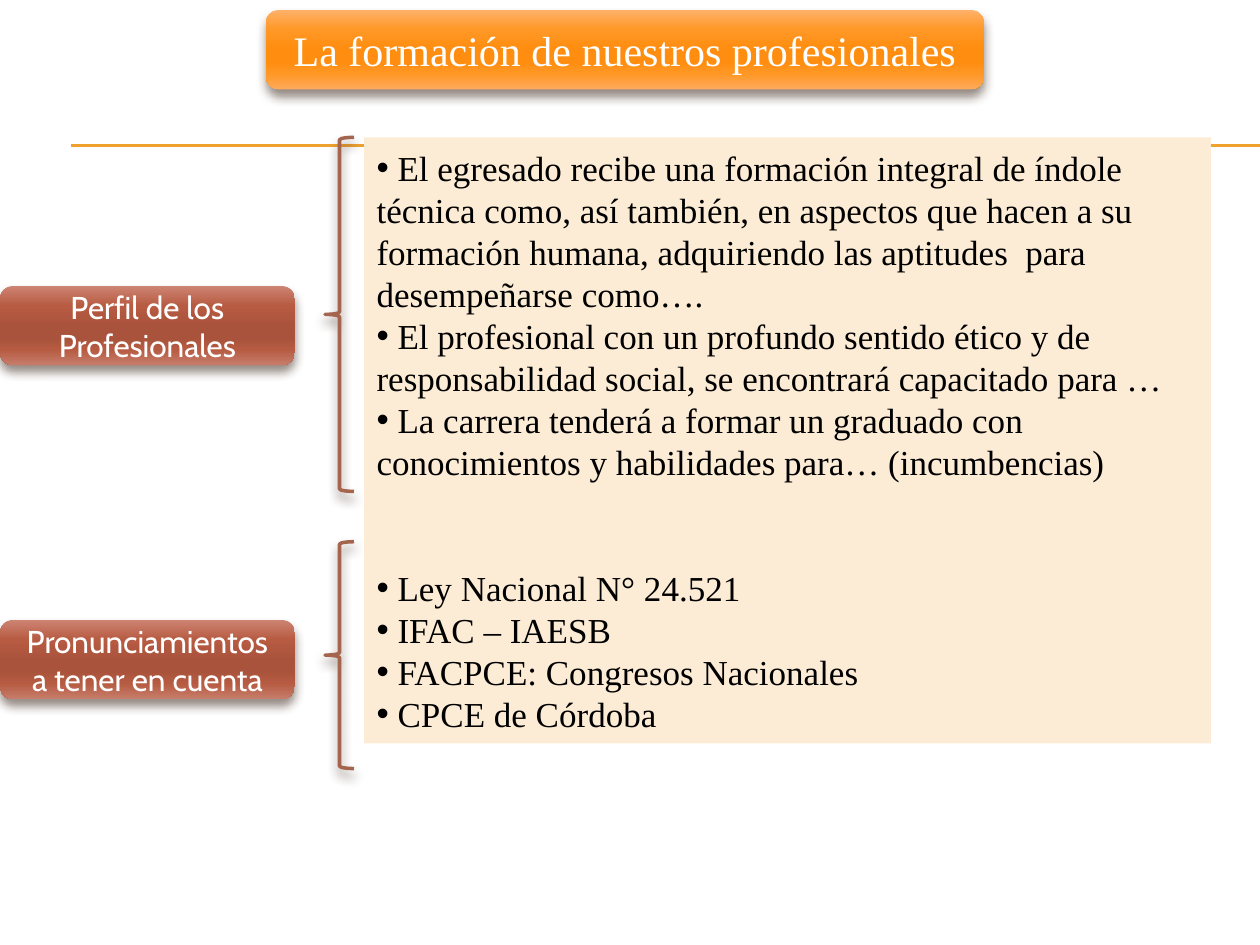
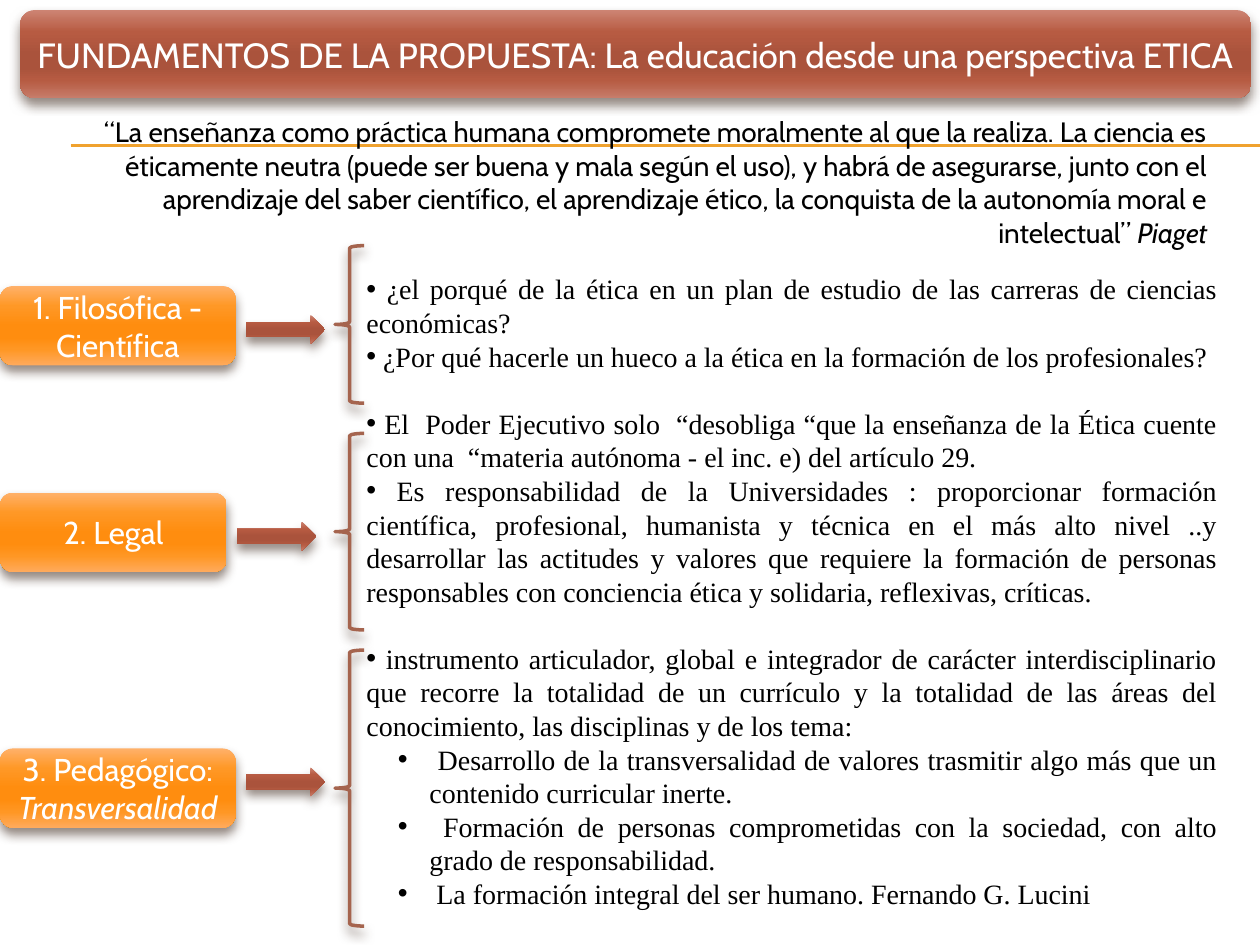
import dataclasses
from typing import Optional

import lxml.etree
import pptx
import pptx.dml.color
import pptx.enum.shapes
import pptx.enum.text
import pptx.oxml.ns
import pptx.util

Inches = pptx.util.Inches
Pt = pptx.util.Pt
RGBColor = pptx.dml.color.RGBColor
Shape = pptx.enum.shapes.MSO_SHAPE
Align = pptx.enum.text.PP_ALIGN
Anchor = pptx.enum.text.MSO_ANCHOR
qn = pptx.oxml.ns.qn

# Shared look
WHITE = RGBColor(0xFF, 0xFF, 0xFF)
BLACK = RGBColor(0x00, 0x00, 0x00)
CREAM = RGBColor(0xFC, 0xEC, 0xD5)
GOLD = RGBColor(0xF0, 0xA2, 0x2E)
BROWN = RGBColor(0xA5, 0x64, 0x4E)
SHADOW = RGBColor(0x4E, 0x3B, 0x30)
STOPS = (0, 25, 50, 65, 80, 100)
ORANGE_GLOSS = tuple(map(RGBColor.from_string, (
    "FFB16A", "FF9826", "FF8D0F", "FF8D0F", "FF9724", "FFAA5C")))
RUST_GLOSS = tuple(map(RGBColor.from_string, (
    "CD8473", "B75B42", "AA533C", "AA533C", "B65B42", "C77D6B")))
SANS = "Cabin"
SERIF = "Times New Roman"
LINE_RATIO = 1.2
PILL_HEIGHT = 0.63
BRACE_WIDTH = 0.23


@dataclasses.dataclass(frozen=True)
class Area:
    left: float
    top: float
    width: float
    height: float

    def lengths(self) -> tuple:
        return tuple(Inches(value) for value in dataclasses.astuple(self))


@dataclasses.dataclass(frozen=True)
class Pill:
    area: Area
    text: str
    gloss: tuple
    size: int = 18
    font: str = SANS
    italic: str = ""


@dataclasses.dataclass(frozen=True)
class Bullet:
    text: str
    gap_lines: int = 0
    nested: bool = False


@dataclasses.dataclass(frozen=True)
class Brace:
    top: float
    height: float


@dataclasses.dataclass(frozen=True)
class Foundation:
    pill: Pill
    arrow_top: float
    brace: Brace


def add_shadow(shape) -> None:
    shape.shadow.inherit = False
    effects = shape._element.spPr.find(qn("a:effectLst"))
    outer = lxml.etree.SubElement(
        effects, qn("a:outerShdw"), blurRad=str(Pt(6)), dist=str(Pt(4)),
        dir="5400000", rotWithShape="0")
    colour = lxml.etree.SubElement(outer, qn("a:srgbClr"), val=str(SHADOW))
    lxml.etree.SubElement(colour, qn("a:alpha"), val="60000")


def add_glossy(page, kind, area: Area, gloss: tuple):
    shape = page.shapes.add_shape(kind, *area.lengths())
    shape.fill.gradient()
    shape.fill.gradient_angle = 270
    stops = shape._element.spPr.find(qn("a:gradFill")).find(qn("a:gsLst"))
    for old_stop in list(stops):
        stops.remove(old_stop)
    for position, colour in zip(STOPS, gloss):
        stop = lxml.etree.SubElement(stops, qn("a:gs"), pos=str(position * 1000))
        lxml.etree.SubElement(stop, qn("a:srgbClr"), val=str(colour))
    shape.line.fill.background()
    add_shadow(shape)
    return shape


def write(para, text: str, font: str, size: int, colour: RGBColor,
          align, italic: str = "") -> None:
    para.alignment = align
    para.font.name = font
    para.font.size = Pt(size)
    para.font.color.rgb = colour
    para.add_run().text = text
    if italic:
        span = para.add_run()
        span.text = italic
        span.font.italic = True


def add_pill(page, pill: Pill) -> None:
    shape = add_glossy(page, Shape.ROUNDED_RECTANGLE, pill.area, pill.gloss)
    frame = shape.text_frame
    frame.word_wrap = True
    frame.vertical_anchor = Anchor.MIDDLE
    write(frame.paragraphs[0], pill.text, pill.font, pill.size, WHITE,
          Align.CENTER, pill.italic)


def add_brace(page, left: float, brace: Brace) -> None:
    area = Area(left, brace.top, BRACE_WIDTH, brace.height)
    shape = page.shapes.add_shape(Shape.LEFT_BRACE, *area.lengths())
    shape.fill.background()
    shape.line.color.rgb = BROWN
    shape.line.width = Pt(2)
    add_shadow(shape)


def add_text_box(page, area: Area, anchor=Anchor.TOP):
    box = page.shapes.add_textbox(*area.lengths())
    box.text_frame.word_wrap = True
    box.text_frame.vertical_anchor = anchor
    return box


def add_bullets(page, area: Area, bullets: tuple, size: int, align,
                anchor=Anchor.TOP, fill: Optional[RGBColor] = None) -> None:
    box = add_text_box(page, area, anchor)
    if fill is not None:
        box.fill.solid()
        box.fill.fore_color.rgb = fill
    frame = box.text_frame
    line_height = size * LINE_RATIO
    for index, bullet in enumerate(bullets):
        para = frame.add_paragraph() if index else frame.paragraphs[0]
        para.line_spacing = Pt(line_height)
        para.space_before = Pt(line_height * bullet.gap_lines)
        properties = para._p.get_or_add_pPr()
        properties.set("marL", str(Inches(0.5 if bullet.nested else 0)))
        properties.set("indent", str(Inches(-0.25 if bullet.nested else 0)))
        lxml.etree.SubElement(properties, qn("a:buFont"), typeface="Arial")
        lxml.etree.SubElement(properties, qn("a:buChar"), char="•")
        write(para, " " + bullet.text, SERIF, size, BLACK, align)


def add_page(deck):
    page = deck.slides.add_slide(deck.slide_layouts[6])
    # Double rule under the title
    for height in (1.15, 1.16):
        rule = page.shapes.add_connector(
            pptx.enum.shapes.MSO_CONNECTOR.STRAIGHT,
            Inches(0.56), Inches(height), Inches(10), Inches(height))
        rule.line.color.rgb = GOLD
        rule.line.width = Pt(0.75)
        lxml.etree.SubElement(rule._element.spPr, qn("a:effectLst"))
    return page


def left_pill(top: float, width: float, text: str, gloss: tuple,
              italic: str = "") -> Pill:
    return Pill(Area(0, top, width, PILL_HEIGHT), text, gloss, italic=italic)


# Slide 1 content
TRAINING_TITLE = Pill(Area(2.11, 0.08, 5.7, PILL_HEIGHT),
                      "La formación de nuestros profesionales",
                      ORANGE_GLOSS, 24, SERIF)
TRAINING_TOPICS = (
    (left_pill(2.27, 2.34, "Perfil de los Profesionales", RUST_GLOSS),
     Brace(1.09, 2.81)),
    (left_pill(4.92, 2.34, "Pronunciamientos a tener en cuenta", RUST_GLOSS),
     Brace(4.3, 1.8)),
)
TRAINING_BULLETS = (
    Bullet("El egresado recibe una formación integral de índole técnica como, "
           "así también, en aspectos que hacen a su formación humana, "
           "adquiriendo las aptitudes  para desempeñarse como…."),
    Bullet("El profesional con un profundo sentido ético y de responsabilidad "
           "social, se encontrará capacitado para …"),
    Bullet("La carrera tenderá a formar un graduado con conocimientos y "
           "habilidades para… (incumbencias)"),
    Bullet("Ley Nacional N° 24.521", gap_lines=2),
    Bullet("IFAC – IAESB"),
    Bullet("FACPCE: Congresos Nacionales"),
    Bullet("CPCE de Córdoba"),
)

# Slide 2 content
ETHICS_TITLE = Pill(
    Area(0.16, 0.08, 9.77, 0.7),
    "FUNDAMENTOS DE LA PROPUESTA: La educación desde una perspectiva ETICA",
    RUST_GLOSS, 20)
QUOTE = ("“La enseñanza como práctica humana compromete moralmente al que la "
         "realiza. La ciencia es éticamente neutra (puede ser buena y mala "
         "según el uso), y habrá de asegurarse, junto con el aprendizaje del "
         "saber científico, el aprendizaje ético, la conquista de la autonomía "
         "moral e intelectual” ")
FOUNDATIONS = (
    Foundation(left_pill(2.27, 1.87, "1. Filosófica - Científica", ORANGE_GLOSS),
               2.5, Brace(1.95, 1.25)),
    Foundation(left_pill(3.91, 1.8, "2. Legal", ORANGE_GLOSS),
               4.14, Brace(3.44, 1.56)),
    Foundation(left_pill(5.94, 1.87, "3. Pedagógico: ", ORANGE_GLOSS,
                         "Transversalidad"),
               6.09, Brace(5.16, 2.19)),
)
ETHICS_BULLETS = (
    Bullet("¿el porqué de la ética en un plan de estudio de las carreras de "
           "ciencias económicas?"),
    Bullet("¿Por qué hacerle un hueco a la ética en la formación de los "
           "profesionales?"),
    Bullet("El  Poder Ejecutivo solo  “desobliga “que la enseñanza de la Ética "
           "cuente con una  “materia autónoma - el inc. e) del artículo 29.",
           gap_lines=1),
    Bullet("Es responsabilidad de la Universidades : proporcionar formación "
           "científica, profesional, humanista y técnica en el más alto nivel "
           "..y desarrollar las actitudes y valores que requiere la formación "
           "de personas responsables con conciencia ética y solidaria, "
           "reflexivas, críticas."),
    Bullet("instrumento articulador, global e integrador de carácter "
           "interdisciplinario que recorre la totalidad de un currículo y la "
           "totalidad de las áreas del conocimiento, las disciplinas y de los "
           "tema:", gap_lines=1),
    Bullet("Desarrollo de la transversalidad de valores trasmitir algo más que "
           "un contenido curricular inerte.", nested=True),
    Bullet("Formación de personas comprometidas con la sociedad, con alto "
           "grado de responsabilidad.", nested=True),
    Bullet("La formación integral del ser humano. Fernando G. Lucini",
           nested=True),
)


def build_training_page(deck) -> None:
    page = add_page(deck)
    add_pill(page, TRAINING_TITLE)
    add_bullets(page, Area(2.89, 1.09, 6.72, 4.81), TRAINING_BULLETS, 20,
                Align.LEFT, Anchor.MIDDLE, CREAM)
    for pill, brace in TRAINING_TOPICS:
        add_pill(page, pill)
        add_brace(page, 2.58, brace)


def build_ethics_page(deck) -> None:
    page = add_page(deck)
    add_pill(page, ETHICS_TITLE)
    quote_box = add_text_box(page, Area(0.23, 0.86, 9.45, 1.2))
    write(quote_box.text_frame.paragraphs[0], QUOTE, SANS, 16, BLACK,
          Align.RIGHT, "Piaget")
    add_bullets(page, Area(2.81, 2.11, 6.95, 5.17), ETHICS_BULLETS, 16,
                Align.JUSTIFY)
    for foundation in FOUNDATIONS:
        add_pill(page, foundation.pill)
        arrow = Area(foundation.pill.area.width + 0.08, foundation.arrow_top,
                     0.63, 0.23)
        add_glossy(page, Shape.RIGHT_ARROW, arrow, RUST_GLOSS)
        add_brace(page, 2.66, foundation.brace)


def main() -> None:
    deck = pptx.Presentation()
    deck.slide_width = Inches(10)
    deck.slide_height = Inches(7.5)
    build_training_page(deck)
    build_ethics_page(deck)
    deck.save("out.pptx")


if __name__ == "__main__":
    main()
